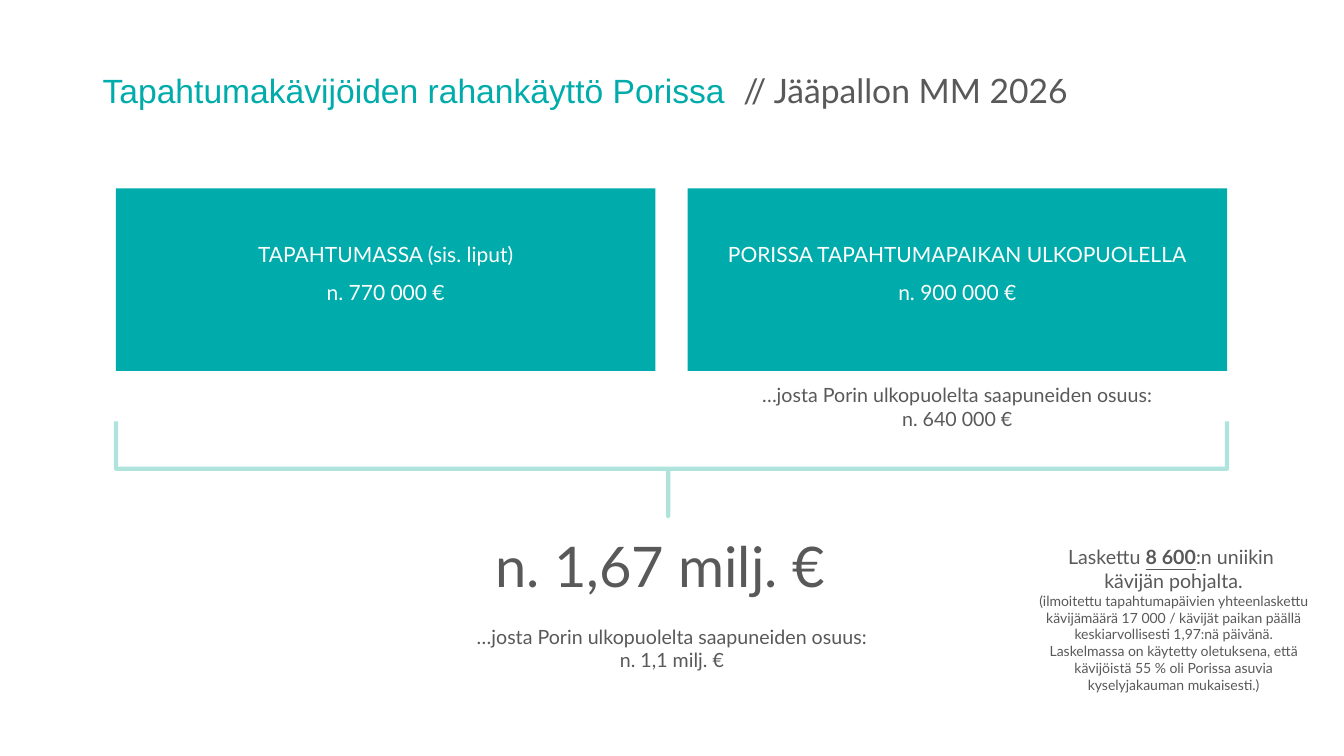
import pptx
import pptx.dml.color
import pptx.enum.shapes
import pptx.enum.text
import pptx.oxml.ns
import pptx.util
from lxml import etree

RGBColor = pptx.dml.color.RGBColor
Align = pptx.enum.text.PP_ALIGN
Anchor = pptx.enum.text.MSO_ANCHOR
AutoSize = pptx.enum.text.MSO_AUTO_SIZE
Shape = pptx.enum.shapes.MSO_SHAPE

TEAL = RGBColor(0x00, 0xAC, 0xAB)
BRACE_GREEN = RGBColor(0x1A, 0xB4, 0x9C)
GREY = RGBColor(0x59, 0x59, 0x59)
WHITE = RGBColor(0xFF, 0xFF, 0xFF)

# The grid has 100 columns and 100 rows.
SLIDE_WIDTH = pptx.util.Inches(13.33)
SLIDE_HEIGHT = pptx.util.Inches(7.5)
CARD_LEFT, CARD_TOP = 8.63, 24.93
CARD_WIDTH, CARD_HEIGHT = 40.14, 24.13
CARD_PITCH = 42.53
CARD_INSET = 0.6

SPENDING = [
    ("TAPAHTUMASSA (sis. liput)", "n. 770 000 €"),
    ("PORISSA TAPAHTUMAPAIKAN ULKOPUOLELLA", "n. 900 000 €"),
]
VISITOR_SHARE = "…josta Porin ulkopuolelta saapuneiden osuus:\n"
CALCULATION = (
    "(ilmoitettu tapahtumapäivien yhteenlaskettu kävijämäärä 17 000 / kävijät "
    "paikan päällä keskiarvollisesti 1,97:nä päivänä. Laskelmassa on käytetty "
    "oletuksena, että kävijöistä 55 % oli Porissa asuvia kyselyjakauman mukaisesti.)"
)


def columns(count):
    return round(SLIDE_WIDTH * count / 100)


def rows(count):
    return round(SLIDE_HEIGHT * count / 100)


def grid_box(left, top, width, height):
    return columns(left), rows(top), columns(width), rows(height)


def add_run(paragraph, text, size, color, font="Lato", bold=False, underline=False):
    """Add text in one format, with a line break at each newline."""
    for index, line in enumerate(text.split("\n")):
        if index:
            paragraph.add_line_break()
        run = paragraph.add_run()
        run.text = line
        run.font.name = font
        run.font.size = pptx.util.Pt(size)
        run.font.color.rgb = color
        run.font.bold = bold
        run.font.underline = underline


def add_text(slide, box, paragraphs, size=14, color=GREY, align=Align.CENTER,
             spacing=1.0, anchor=Anchor.TOP, auto_size=AutoSize.SHAPE_TO_FIT_TEXT):
    """Each paragraph is a string or a list of (text, format changes) pairs."""
    frame = slide.shapes.add_textbox(*grid_box(*box)).text_frame
    frame.word_wrap = True
    frame.auto_size = auto_size
    frame.vertical_anchor = anchor
    for index, content in enumerate(paragraphs):
        paragraph = frame.add_paragraph() if index else frame.paragraphs[0]
        paragraph.alignment = align
        paragraph.line_spacing = spacing
        parts = [(content, {})] if isinstance(content, str) else content
        for text, changes in parts:
            add_run(paragraph, text, **{"size": size, "color": color, **changes})


def add_spending_card(slide, left, lines):
    card = slide.shapes.add_shape(
        Shape.RECTANGLE, *grid_box(left, CARD_TOP, CARD_WIDTH, CARD_HEIGHT))
    card.shadow.inherit = False
    card.fill.solid()
    card.fill.fore_color.rgb = TEAL
    card.line.fill.background()
    add_text(slide, (left + CARD_INSET, 29.6, CARD_WIDTH - 2 * CARD_INSET, 10.93),
             lines, size=15, color=WHITE, spacing=1.5)


def add_sum_brace(slide, left, top, width, height):
    """Draw a square brace opening upwards over the given grid area."""
    x, y, span, depth = grid_box(left, top, width, height)
    brace = slide.shapes.add_shape(
        Shape.LEFT_BRACE, x + (span - depth) // 2, y + (depth - span) // 2, depth, span)
    brace.rotation = 270
    brace.adjustments[0] = 0
    brace.adjustments[1] = 0.497
    brace.shadow.inherit = False
    brace.fill.background()
    brace.line.color.rgb = BRACE_GREEN
    brace.line.width = pptx.util.Pt(3)
    qn = pptx.oxml.ns.qn
    line_color = brace.line.fill._xPr.find(qn("a:solidFill"))[0]
    etree.SubElement(line_color, qn("a:alpha")).set("val", "34000")


def main():
    deck = pptx.Presentation()
    deck.slide_width, deck.slide_height = SLIDE_WIDTH, SLIDE_HEIGHT
    slide = deck.slides.add_slide(deck.slide_layouts[6])

    add_text(slide, (6.9, 6, 90.62, 12.4),
             [[("Tapahtumakävijöiden rahankäyttö Porissa  ", {"font": "Arial", "color": TEAL}),
               ("// Jääpallon MM 2026", {})]],
             size=24, align=Align.LEFT, spacing=0.9, anchor=Anchor.MIDDLE,
             auto_size=AutoSize.NONE)

    for index, lines in enumerate(SPENDING):
        add_spending_card(slide, CARD_LEFT + index * CARD_PITCH, lines)

    add_sum_brace(slide, CARD_LEFT, 55.73, CARD_PITCH + CARD_WIDTH, 12.53)
    add_text(slide, (26.18, 69.6, 45.84, 10.27), ["n. 1,67 milj. €"], size=40)

    for left, top, amount in [(CARD_LEFT + CARD_PITCH, 50, "n. 640 000 €"),
                              (29.93, 82, "n. 1,1 milj. €")]:
        add_text(slide, (left, top, CARD_WIDTH, 7.6), [VISITOR_SHARE + amount])

    add_text(slide, (76.37, 71.47, 21.9, 21.07),
             [[("Laskettu ", {}), ("8 600", {"bold": True, "underline": True}),
               (":n uniikin \nkävijän pohjalta.", {})],
              [(CALCULATION, {"size": 10})]])

    deck.save("out.pptx")


if __name__ == "__main__":
    main()
